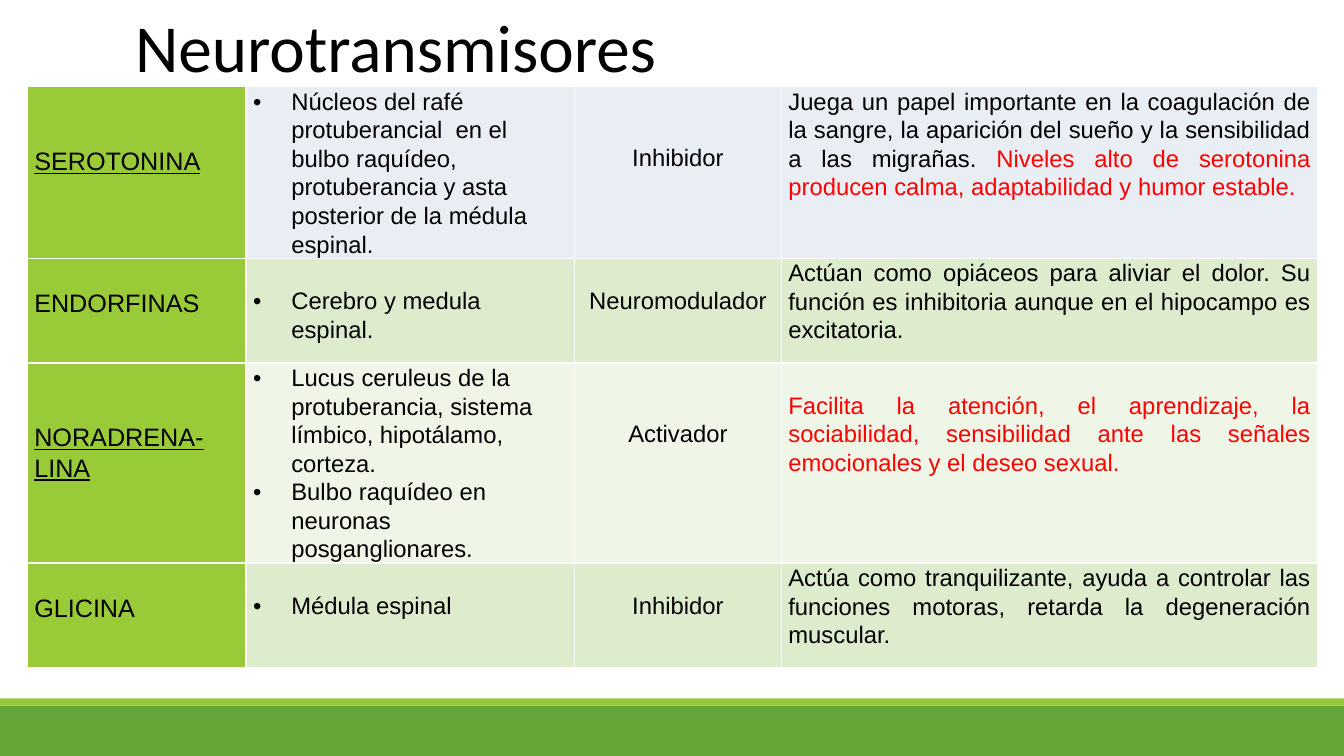
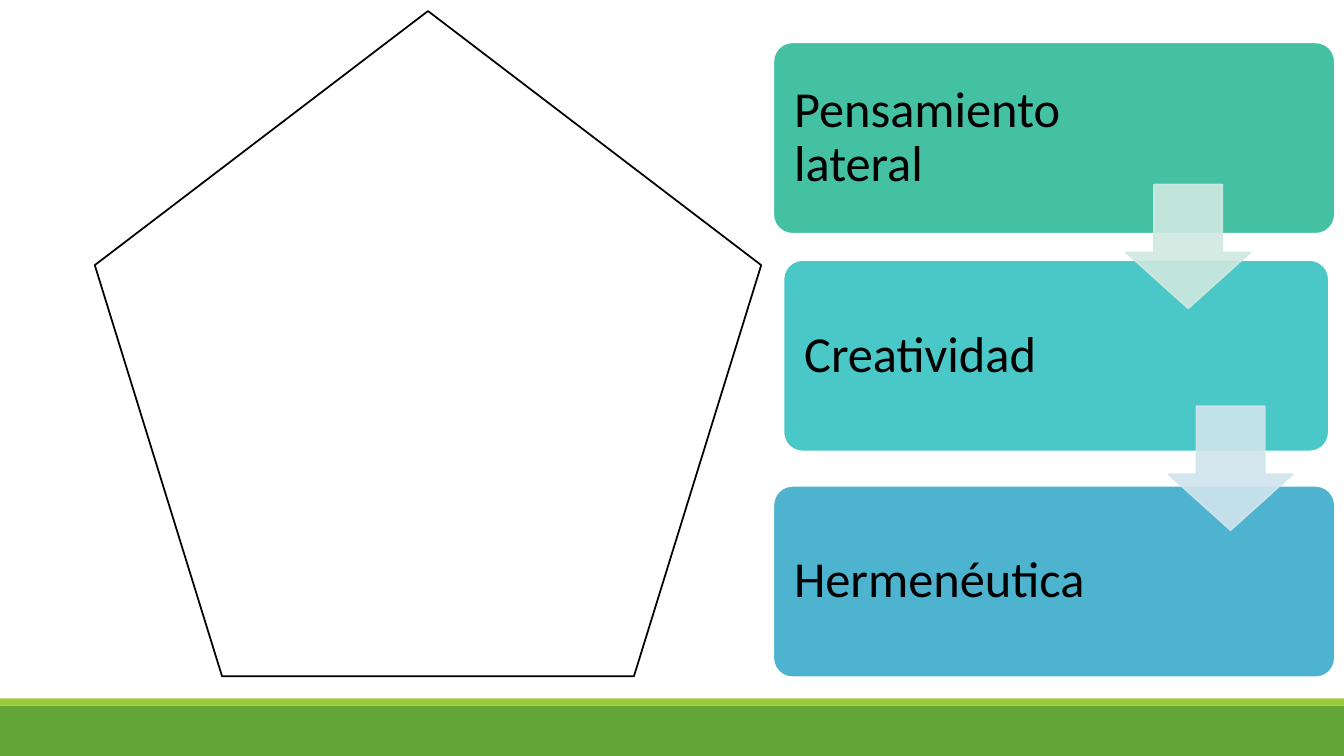
from lxml import etree
from pptx import Presentation
from pptx.dml.color import RGBColor
from pptx.enum.shapes import MSO_SHAPE as Shape
from pptx.enum.text import MSO_ANCHOR as Anchor, PP_ALIGN as Align
from pptx.oxml import parse_xml
from pptx.oxml.ns import nsdecls, qn
from pptx.util import Inches, Pt

BLACK, WHITE, RED = "000000", "FFFFFF", "FF0000"
GREEN, LIME = "63A537", "99CB38"
TITLE_ONLY, BLANK = 5, 6
LINE_HEIGHT = 0.0163  # inches per point of text size

COLUMN_WIDTHS = [2.17, 3.26, 2.05, 5.32]
# Row height, fill, then for each cell: lines left free above, paragraphs.
# A paragraph is a list of (text, colour) spans.
ROWS = [
    (1.7, "E9EDF4", [
        (2, [[("SEROTONINA", BLACK)]]),
        (0, [[("Núcleos del rafé protuberancial  en el bulbo raquídeo, "
               "protuberancia y asta posterior de la médula espinal.", BLACK)]]),
        (2, [[("Inhibidor", BLACK)]]),
        (0, [[("Juega un papel importante en la coagulación de la sangre, la aparición "
               "del sueño y la sensibilidad a las migrañas. ", BLACK),
              ("Niveles alto de serotonina producen calma, adaptabilidad y humor "
               "estable.", RED)]]),
    ]),
    (1.04, "DEECCE", [
        (1, [[("ENDORFINAS", BLACK)]]),
        (1, [[("Cerebro y medula espinal.", BLACK)]]),
        (1, [[("Neuromodulador", BLACK)]]),
        (0, [[("Actúan como opiáceos para aliviar el dolor. Su función es inhibitoria "
               "aunque en el hipocampo es excitatoria.", BLACK)]]),
    ]),
    (1.98, "EFF6E8", [
        (2, [[("NORADRENA-LINA", BLACK)]]),
        (0, [[("Lucus ceruleus de la protuberancia, sistema límbico, hipotálamo, "
               "corteza.", BLACK)],
             [("Bulbo raquídeo en neuronas posganglionares.", BLACK)]]),
        (2, [[("Activador", BLACK)]]),
        (1, [[("Facilita la atención, el aprendizaje, la sociabilidad, sensibilidad "
               "ante las señales emocionales y el deseo sexual.", RED)]]),
    ]),
    (1.04, "DEECCE", [
        (1, [[("GLICINA", BLACK)]]),
        (1, [[("Médula espinal", BLACK)]]),
        (1, [[("Inhibidor", BLACK)]]),
        (0, [[("Actúa como tranquilizante, ayuda a controlar las funciones motoras, "
               "retarda la degeneración muscular.", BLACK)]]),
    ]),
]
UNDERLINED = {"SEROTONINA", "NORADRENA-LINA"}
COLUMN_ALIGN = [Align.LEFT, Align.LEFT, Align.CENTER, Align.JUSTIFY]
NAME_COLUMN, PLACE_COLUMN = 0, 1

STEPS = [
    ("Pensamiento lateral", "44C1A3", (7.67, 0.42, 5.57, 1.9)),
    ("Creatividad", "49C8C7", (7.77, 2.58, 5.41, 1.9)),
    ("Hermenéutica", "4EB3CF", (7.67, 4.82, 5.57, 1.9)),
]
ARROWS = [("CFE9E0", 11.17, 1.83), ("D0E5ED", 11.59, 4.03)]


def paint(target, colour):
    """Give a fill a solid colour."""
    target.solid()
    target.fore_color.rgb = RGBColor.from_string(colour)


def style(span, size, colour, font):
    span.font.size = Pt(size)
    span.font.name = font
    span.font.color.rgb = RGBColor.from_string(colour)


def add_shape(slide, kind, place, fill, line=None):
    shape = slide.shapes.add_shape(kind, *map(Inches, place))
    shape.shadow.inherit = False
    paint(shape.fill, fill)
    if line:
        paint(shape.line.fill, line)
        shape.line.width = Pt(1.25)
    else:
        shape.line.fill.background()
    return shape


def add_slide(deck, layout):
    """Add a slide with the two bands at its foot."""
    slide = deck.slides.add_slide(deck.slide_layouts[layout])
    add_shape(slide, Shape.RECTANGLE, (0, 7, 13.33, 0.5), GREEN)
    add_shape(slide, Shape.RECTANGLE, (0, 6.93, 13.33, 0.07), LIME)
    return slide


def set_title(slide, text):
    title = slide.shapes.title
    title.left, title.top, title.width, title.height = map(Inches, (1.24, 0, 6, 0.91))
    frame = title.text_frame
    frame.text = text
    frame.vertical_anchor = Anchor.TOP
    frame.paragraphs[0].alignment = Align.LEFT
    style(frame.paragraphs[0].runs[0], 48, BLACK, "Calibri")


def add_bullet(para):
    properties = para._p.get_or_add_pPr()
    properties.set("marL", str(Inches(0.38)))
    properties.set("indent", str(Inches(-0.38)))
    etree.SubElement(properties, qn("a:buFont")).set("typeface", "Arial")
    etree.SubElement(properties, qn("a:buChar")).set("char", "•")


def add_borders(cell):
    """Draw thin white lines; borders come before the fill in the cell's XML."""
    properties = cell._tc.get_or_add_tcPr()
    for index, side in enumerate(("lnL", "lnR", "lnT", "lnB")):
        properties.insert(index, parse_xml(
            f'<a:{side} {nsdecls("a")} w="{Pt(1)}"><a:solidFill>'
            f'<a:srgbClr val="{WHITE}"/></a:solidFill></a:{side}>'))


def fill_cell(cell, column, fill, free_lines, paragraphs):
    size = 18 if column == NAME_COLUMN else 17
    paint(cell.fill, LIME if column == NAME_COLUMN else fill)
    add_borders(cell)
    cell.margin_left = cell.margin_right = Inches(0.07)
    cell.margin_top = Inches(free_lines * size * LINE_HEIGHT)
    cell.margin_bottom = 0
    frame = cell.text_frame
    for index, spans in enumerate(paragraphs):
        para = frame.add_paragraph() if index else frame.paragraphs[0]
        para.alignment = COLUMN_ALIGN[column]
        para.line_spacing = 1.07
        if column == PLACE_COLUMN:
            add_bullet(para)
        for text, colour in spans:
            span = para.add_run()
            span.text = text
            style(span, size, colour, "Arial")
            span.font.underline = text in UNDERLINED or None


def add_transmitter_table(slide):
    heights = [height for height, _, _ in ROWS]
    place = map(Inches, (0.27, 0.86, sum(COLUMN_WIDTHS), sum(heights)))
    table = slide.shapes.add_table(len(ROWS), len(COLUMN_WIDTHS), *place).table
    table.first_row = table.horz_banding = False
    for column, width in zip(table.columns, COLUMN_WIDTHS):
        column.width = Inches(width)
    for row, (height, fill, cells) in zip(table.rows, ROWS):
        row.height = Inches(height)
        for column, (free_lines, paragraphs) in enumerate(cells):
            fill_cell(row.cells[column], column, fill, free_lines, paragraphs)


def add_step(slide, text, fill, place):
    box = add_shape(slide, Shape.ROUNDED_RECTANGLE, place, fill, WHITE)
    box.adjustments[0] = 0.1
    frame = box.text_frame
    frame.text = text
    frame.word_wrap = True
    frame.vertical_anchor = Anchor.MIDDLE
    frame.margin_left = frame.margin_top = frame.margin_bottom = Inches(0.15)
    frame.margin_right = Inches(2)
    para = frame.paragraphs[0]
    para.alignment = Align.LEFT
    para.line_spacing = 0.9
    style(para.runs[0], 36, BLACK, "Calibri")


def add_arrow(slide, colour, left, top):
    arrow = add_shape(slide, Shape.DOWN_ARROW, (left, top, 1.23, 1.23), colour, colour)
    arrow.adjustments[0], arrow.adjustments[1] = 0.55, 0.45
    for tint in arrow._element.spPr.iter(qn("a:srgbClr")):
        etree.SubElement(tint, qn("a:alpha")).set("val", "90000")


def main():
    deck = Presentation()
    deck.slide_width, deck.slide_height = Inches(13.33), Inches(7.5)

    transmitters = add_slide(deck, TITLE_ONLY)
    add_transmitter_table(transmitters)
    set_title(transmitters, "Neurotransmisores")

    thinking = add_slide(deck, BLANK)
    add_shape(thinking, Shape.REGULAR_PENTAGON, (0.94, 0.11, 6.61, 6.6), WHITE, BLACK)
    for step in STEPS:
        add_step(thinking, *step)
    for arrow in ARROWS:
        add_arrow(thinking, *arrow)

    deck.save("out.pptx")


if __name__ == "__main__":
    main()
